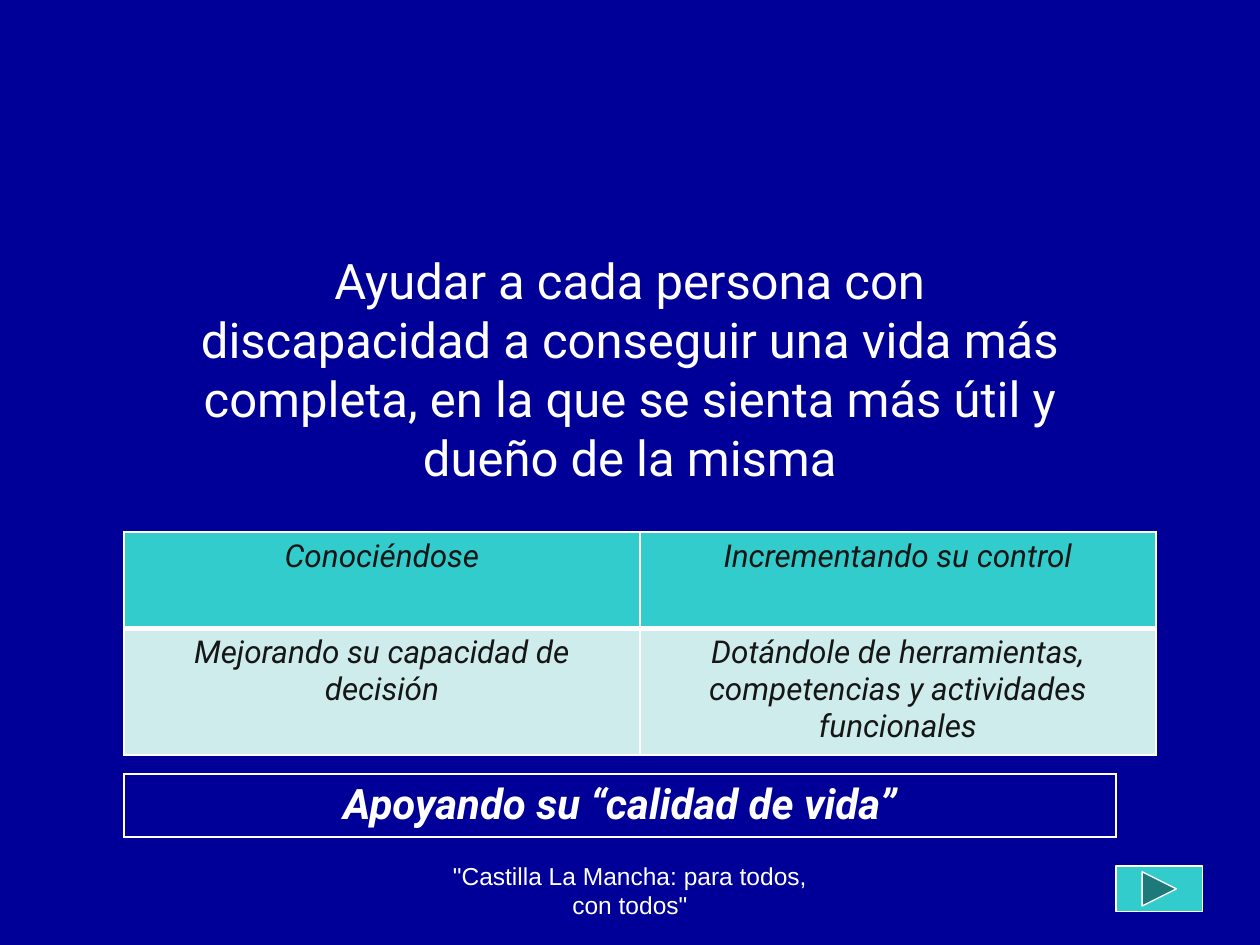
from dataclasses import dataclass

from lxml import etree
from pptx import Presentation
from pptx.dml.color import RGBColor
from pptx.enum.shapes import MSO_SHAPE
from pptx.enum.text import MSO_ANCHOR, PP_ALIGN
from pptx.oxml.ns import qn
from pptx.util import Cm, Pt

NEXT = MSO_SHAPE.ACTION_BUTTON_FORWARD_OR_NEXT
TOP, BOTTOM = MSO_ANCHOR.TOP, MSO_ANCHOR.BOTTOM
CENTER = PP_ALIGN.CENTER

COLORS = {
    "navy": "000099",
    "teal": "33CCCC",
    "pale": "CEECEC",
    "white": "FFFFFF",
    "ink": "161616",
}


@dataclass
class Box:
    left: float
    top: float
    width: float
    height: float

    def place(self) -> tuple:
        return Cm(self.left), Cm(self.top), Cm(self.width), Cm(self.height)


@dataclass
class Row:
    height: float
    texts: list
    fill: str = ""
    over: float = 1
    under: float = 1


def tint(name: str) -> RGBColor:
    return RGBColor.from_string(COLORS[name])


def write(frame, text: str, size=18, font="Roboto", color="white",
          bold=False, italic=False) -> None:
    para = frame.paragraphs[0]
    para.alignment = CENTER
    run = para.add_run()
    run.text = text
    run.font.size = Pt(size)
    run.font.name = font
    run.font.bold = bold
    run.font.italic = italic
    run.font.color.rgb = tint(color)


def add_text(slide, box: Box, text: str, anchor=TOP, **style) -> None:
    frame = slide.shapes.add_textbox(*box.place()).text_frame
    frame.word_wrap = True
    frame.vertical_anchor = anchor
    write(frame, text, **style)


def add_edges(cell, over: float, under: float) -> None:
    props = cell._tc.get_or_add_tcPr()
    for side, width in (("L", 1), ("R", 1), ("T", over), ("B", under)):
        edge = etree.SubElement(props, qn(f"a:ln{side}"), w=str(Pt(width)))
        solid = etree.SubElement(edge, qn("a:solidFill"))
        etree.SubElement(solid, qn("a:srgbClr"), val=COLORS["white"])


def add_grid(slide, box: Box, rows: list, **style) -> None:
    count = len(rows[0].texts)
    table = slide.shapes.add_table(len(rows), count, *box.place()).table
    table.first_row = table.horz_banding = False
    for col in table.columns:
        col.width = Cm(box.width / count)
    for i, row in enumerate(rows):
        table.rows[i].height = Cm(row.height)
        for j, text in enumerate(row.texts):
            cell = table.cell(i, j)
            add_edges(cell, row.over, row.under)
            if row.fill:
                cell.fill.solid()
                cell.fill.fore_color.rgb = tint(row.fill)
            else:
                cell.fill.background()
            write(cell.text_frame, text, italic=True, **style)


def main() -> None:
    deck = Presentation()
    deck.slide_width, deck.slide_height = Cm(25.4), Cm(19.05)
    slide = deck.slides.add_slide(deck.slide_layouts[6])
    slide.background.fill.solid()
    slide.background.fill.fore_color.rgb = tint("navy")

    # Mission statement
    add_text(slide, Box(3.73, 4.93, 17.93, 10.39),
             "Ayudar a cada persona con discapacidad a conseguir una vida más "
             "completa, en la que se sienta más útil y dueño de la misma",
             size=28)

    # Forward button
    button = slide.shapes.add_shape(NEXT, *Box(22.5, 17.46, 1.74, 0.92).place())
    button.shadow.inherit = False
    button.fill.solid()
    button.fill.fore_color.rgb = tint("teal")
    button.line.color.rgb = tint("white")
    button.line.width = Pt(0.75)

    # Footer
    add_text(slide, Box(8.68, 17.35, 8.04, 1.32),
             '"Castilla La Mancha: para todos, con todos"',
             anchor=BOTTOM, size=14, font="Arial")

    # Ways of helping
    add_grid(slide, Box(2.5, 10.72, 20.8, 4.5), [
        Row(1.95, ["Conociéndose", "Incrementando su control"],
            "teal", under=3),
        Row(2.55, ["Mejorando su capacidad de decisión",
                   "Dotándole de herramientas, competencias y actividades "
                   "funcionales"], "pale", over=3),
    ], color="ink")

    # Closing band
    add_grid(slide, Box(2.5, 15.6, 20, 1.27),
             [Row(1.27, ["Apoyando su “calidad de vida”"])],
             size=24, bold=True)

    deck.save("out.pptx")


if __name__ == "__main__":
    main()
